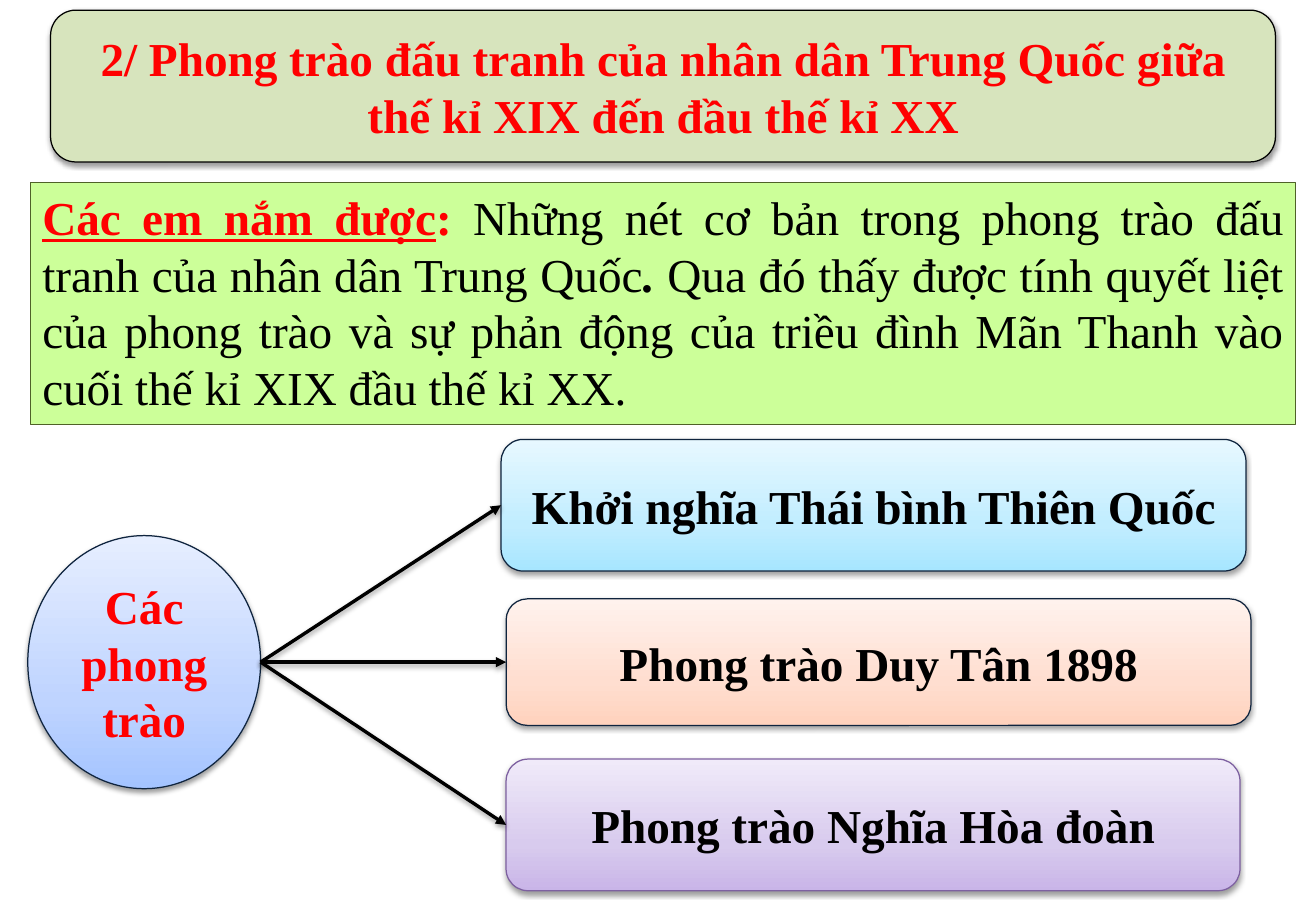
"""Build the slide on Chinese popular movements, mid-19th to early 20th century."""
from copy import deepcopy

from pptx import Presentation
from pptx.dml.color import RGBColor
from pptx.enum.shapes import MSO_CONNECTOR, MSO_SHAPE
from pptx.enum.text import MSO_ANCHOR, MSO_AUTO_SIZE, PP_ALIGN
from pptx.oxml import parse_xml
from pptx.oxml.ns import nsdecls, qn
from pptx.util import Pt

OVAL, RECTANGLE, ROUNDED = MSO_SHAPE.OVAL, MSO_SHAPE.RECTANGLE, MSO_SHAPE.ROUNDED_RECTANGLE
STRAIGHT = MSO_CONNECTOR.STRAIGHT
TOP, MIDDLE = MSO_ANCHOR.TOP, MSO_ANCHOR.MIDDLE
CENTER, JUSTIFY = PP_ALIGN.CENTER, PP_ALIGN.JUSTIFY
GROW = MSO_AUTO_SIZE.SHAPE_TO_FIT_TEXT

THEME = {
    "font": "Times New Roman",
    "size": 28,
    "red": "FF0000",
    "black": "000000",
    "navy": "0F243E",
    "purple": "7D60A0",
    "olive": "4F6228",
    "banner": ["D7E4BD"],
    "goal": ["CCFF99"],
    "blue": ["A4C4FF", "BFD4FF", "E6EEFF"],
    "cyan": ["A7E6FF", "C1EDFF", "E7F8FF"],
    "peach": ["FFD2BD", "FFDED0", "FFF2ED"],
    "lilac": ["C9B5E8", "D8CBEE", "F0EAF9"],
    "stops": [0, 0.35, 1],
}
SHADOW = (
    f'<a:effectLst {nsdecls("a")}><a:outerShdw blurRad="40000" dist="20000" dir="5400000" '
    f'rotWithShape="0"><a:srgbClr val="{THEME["black"]}"><a:alpha val="38000"/></a:srgbClr>'
    "</a:outerShdw></a:effectLst>"
)


def add_box(page, kind, bounds, fill, line, shadow=True):
    """Add a filled, outlined shape."""
    box = page.shapes.add_shape(kind, *map(Pt, bounds))
    colors = THEME[fill]
    if len(colors) == 1:
        box.fill.solid()
        box.fill.fore_color.rgb = RGBColor.from_string(colors[0])
    else:
        box.fill.gradient()
        box.fill.gradient_angle = 90
        stop_list = box.element.spPr.find(qn("a:gradFill")).find(qn("a:gsLst"))
        stop_list.append(deepcopy(stop_list[0]))
        for stop, position, color in zip(box.fill.gradient_stops, THEME["stops"], colors):
            stop.position = position
            stop.color.rgb = RGBColor.from_string(color)
    box.line.color.rgb = RGBColor.from_string(THEME[line])
    box.line.width = Pt(0.75)
    if shadow:
        box.element.spPr.append(parse_xml(SHADOW))
    else:
        box.shadow.inherit = False
    return box


def write(box, spans, align=CENTER, anchor=MIDDLE):
    """Write one paragraph of (text, color, format values) spans."""
    frame = box.text_frame
    frame.word_wrap = True
    frame.vertical_anchor = anchor
    para = frame.paragraphs[0]
    para.alignment = align
    for text, color, values in spans:
        span = para.add_run()
        span.text = text
        span.font.color.rgb = RGBColor.from_string(THEME[color])
        for name, value in {"name": THEME["font"], "size": Pt(THEME["size"]), **values}.items():
            setattr(span.font, name, value)
    return para


deck = Presentation()
deck.slide_width, deck.slide_height = Pt(780), Pt(540)
page = deck.slides.add_slide(deck.slide_layouts[6])
bold = {"bold": True}

hub = add_box(page, OVAL, (16.5, 317.5, 138, 150), "blue", "navy")
write(hub, [("Các phong trào", "red", bold)])

movements = [
    ("Khởi nghĩa Thái bình Thiên Quốc", (297, 260.5, 441.5, 78), "cyan", "navy"),
    ("Phong trào Duy Tân 1898", (300, 355, 441.5, 75), "peach", "navy"),
    ("Phong trào Nghĩa Hòa đoàn", (300, 450, 435, 78), "lilac", "purple"),
]
for label, bounds, fill, line in movements:
    card = add_box(page, ROUNDED, bounds, fill, line)
    write(card, [(label, "black", bold)])
    arrow = page.shapes.add_connector(
        STRAIGHT,
        hub.left + hub.width, hub.top + hub.height // 2,
        card.left, card.top + card.height // 2,
    )
    arrow.line.color.rgb = RGBColor.from_string(THEME["black"])
    arrow.line.width = Pt(2)
    arrow.line._get_or_add_ln().append(parse_xml(f'<a:tailEnd {nsdecls("a")} type="triangle"/>'))
    arrow._element.spPr.append(parse_xml(SHADOW))

banner = add_box(page, ROUNDED, (30, 6, 726, 90), "banner", "black")
title = "2/ Phong trào đấu tranh của nhân dân Trung Quốc giữa thế kỉ XIX đến đầu thế kỉ XX"
write(banner, [(title, "red", bold)]).space_before = Pt(6)

goal = add_box(page, RECTANGLE, (18, 108, 750, 143.5), "goal", "olive", shadow=False)
goal_spans = [
    ("Các em nắm được", "red", {"bold": True, "underline": True}),
    (": ", "red", bold),
    ("Những nét cơ bản trong phong trào đấu tranh của nhân dân Trung Quốc", "black", {}),
    (".", "black", {"bold": True, "italic": True}),
    (" Qua đó thấy được tính quyết liệt của phong trào và sự phản động của triều đình "
     "Mãn Thanh vào cuối thế kỉ XIX đầu thế kỉ XX.", "black", {}),
]
write(goal, goal_spans, JUSTIFY, TOP)
goal.text_frame.auto_size = GROW

deck.save("out.pptx")
